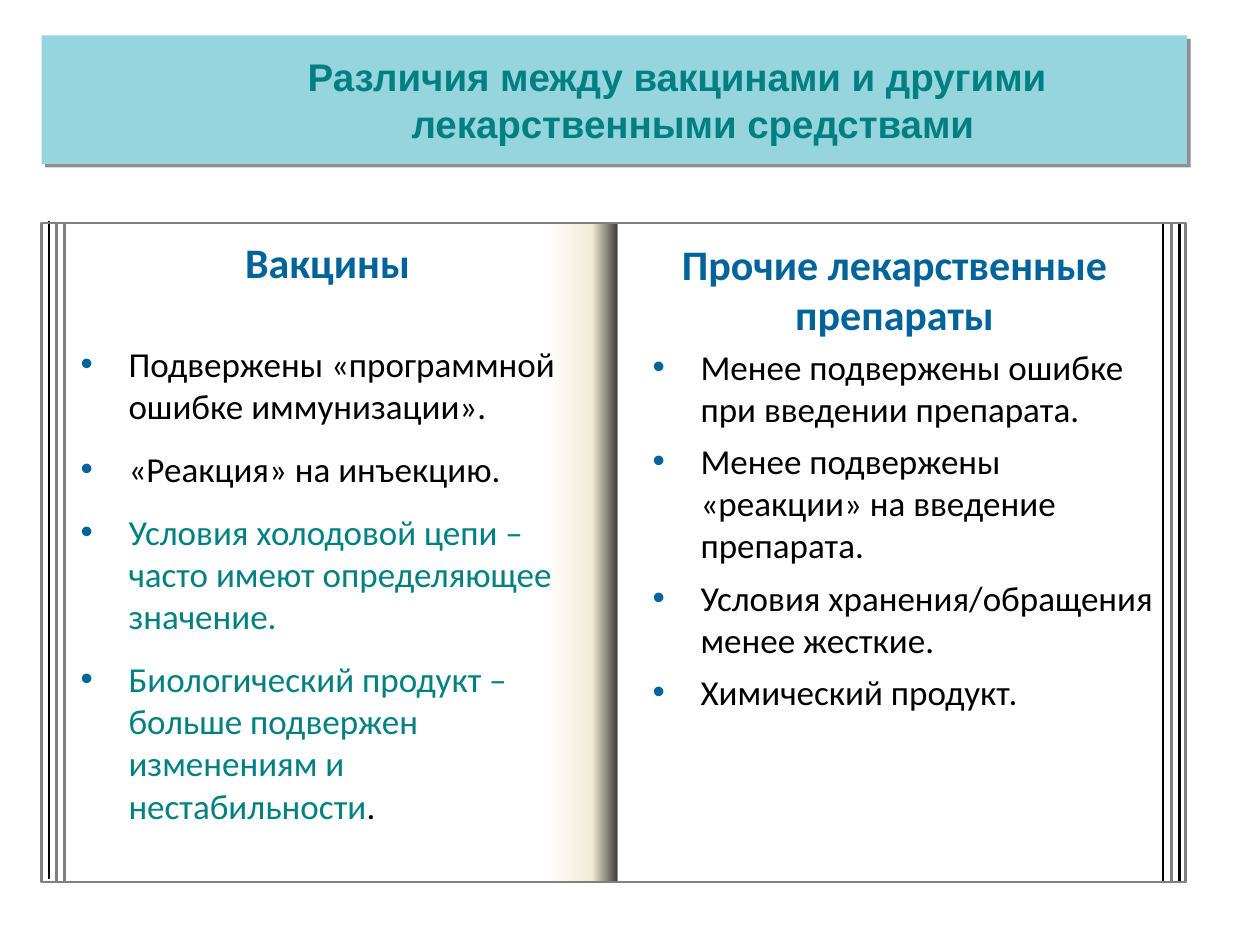
from copy import deepcopy
from dataclasses import dataclass

from lxml import etree
from pptx import Presentation
from pptx.dml.color import RGBColor
from pptx.enum.shapes import MSO_CONNECTOR, MSO_SHAPE
from pptx.enum.text import MSO_ANCHOR, MSO_AUTO_SIZE, PP_ALIGN
from pptx.oxml.ns import qn
from pptx.util import Inches, Pt

LINE, RECT = MSO_CONNECTOR.STRAIGHT, MSO_SHAPE.RECTANGLE
TOP, MIDDLE = MSO_ANCHOR.TOP, MSO_ANCHOR.MIDDLE
LEFT, CENTER = PP_ALIGN.LEFT, PP_ALIGN.CENTER
FIXED = MSO_AUTO_SIZE.NONE
BLACK, GREY, TEAL, BLUE = "000000", "808080", "008080", "00639A"
TALL = 5.23


@dataclass
class Rule:
    x: float
    y: float
    color: str
    width: float = 1.5


@dataclass
class Block:
    slot: int
    box: tuple
    items: list
    font: dict
    para: dict
    indent: tuple = (0, 0)
    anchor: int = TOP
    bullet: bool = False


def rgb(code: str) -> RGBColor:
    return RGBColor.from_string(code)


def apply(target, style: dict) -> None:
    for name, value in style.items():
        setattr(target, name, value)


def draw_rule(slide, rule: Rule) -> None:
    x, y = Inches(rule.x), Inches(rule.y)
    line = slide.shapes.add_connector(LINE, x, y, x, y + Inches(TALL))
    line.line.color.rgb = rgb(rule.color)
    line.line.width = Pt(rule.width)
    etree.SubElement(line._element.spPr, qn("a:effectLst"))


def draw_rect(slide, box: tuple):
    rect = slide.shapes.add_shape(RECT, *map(Inches, box))
    rect.shadow.inherit = False
    return rect


def draw_fold(slide) -> None:
    fold = draw_rect(slide, (4.33, 1.77, 0.57, TALL))
    fold.line.fill.background()
    fold.fill.gradient()
    fold.fill.gradient_angle = 0
    first = fold._element.spPr.find(".//" + qn("a:gs"))
    first.addnext(deepcopy(first))
    shades = [(0, "FFFFFF"), (0.65, "F0EBD5"), (1, "404040")]
    for stop, (place, code) in zip(fold.fill.gradient_stops, shades):
        stop.position = place
        stop.color.rgb = rgb(code)


def draw_frame(slide) -> None:
    frame = draw_rect(slide, (0.33, 1.77, 9.08, TALL))
    frame.fill.background()
    frame.line.color.rgb = rgb(GREY)
    frame.line.width = Pt(1.5)


def add_mark(props) -> None:
    tint = etree.SubElement(props, qn("a:buClr"))
    etree.SubElement(tint, qn("a:srgbClr"), val=BLUE)
    etree.SubElement(props, qn("a:buFont"), typeface="Arial")
    etree.SubElement(props, qn("a:buChar"), char="•")


def fill_block(slide, block: Block):
    holder = next(p for p in slide.placeholders
                  if p.placeholder_format.idx == block.slot)
    sides = dict(zip(("left", "top", "width", "height"), map(Inches, block.box)))
    apply(holder, sides)
    frame = holder.text_frame
    apply(frame, {"word_wrap": True, "auto_size": FIXED,
                  "vertical_anchor": block.anchor})
    for i, runs in enumerate(block.items):
        para = frame.add_paragraph() if i else frame.paragraphs[0]
        apply(para, block.para)
        if i == 0:
            para.space_before = Pt(0)
        props = para._p.get_or_add_pPr()
        margin, hang = block.indent
        props.set("marL", str(Inches(margin)))
        props.set("indent", str(Inches(hang)))
        if block.bullet:
            add_mark(props)
        for text, code in runs:
            run = para.add_run()
            run.text = text
            apply(run.font, block.font)
            run.font.color.rgb = rgb(code)
    slide.shapes._spTree.append(holder._element)
    return holder


def add_shade(shape) -> None:
    effects = etree.SubElement(shape._element.spPr, qn("a:effectLst"))
    shade = etree.SubElement(effects, qn("a:outerShdw"), blurRad="0",
                             dist=str(Pt(3)), dir="2700000", algn="tl")
    tint = etree.SubElement(shade, qn("a:srgbClr"), val=BLACK)
    etree.SubElement(tint, qn("a:alpha"), val="43000")


def main() -> None:
    deck = Presentation()
    deck.slide_width, deck.slide_height = Inches(10), Inches(7.5)
    slide = deck.slides.add_slide(deck.slide_layouts[4])

    draw_rule(slide, Rule(4.88, 1.77, BLACK, 0.75))
    draw_fold(slide)
    for rule in [
        Rule(0.51, 1.76, GREY), Rule(0.39, 1.75, BLACK),
        Rule(9.23, 1.76, BLACK), Rule(9.36, 1.76, BLACK),
        Rule(0.45, 1.76, GREY), Rule(9.3, 1.77, GREY),
    ]:
        draw_rule(slide, rule)
    draw_frame(slide)

    head = {"name": "Calibri", "size": Pt(24), "bold": True}
    body = {"name": "Calibri", "size": Pt(20), "bold": False}
    mid = {"alignment": CENTER, "line_spacing": 1.0, "space_before": Pt(0)}
    tight = {**mid, "alignment": LEFT, "space_after": Pt(6)}
    loose = {**tight, "space_before": Pt(6)}
    hang = (0.38, -0.38)
    left = [
        [("Подвержены «программной ошибке иммунизации».", BLACK)],
        [("«Реакция» на инъекцию.", BLACK)],
        [("Условия холодовой цепи – часто имеют определяющее значение.", TEAL)],
        [("Биологический продукт – больше подвержен изменениям и "
          "нестабильности", TEAL), (".", BLACK)],
    ]
    right = [
        [("Менее подвержены ошибке при введении препарата.", BLACK)],
        [("Менее подвержены «реакции» на введение препарата.", BLACK)],
        [("Условия хранения/обращения менее жесткие.", BLACK)],
        [("Химический продукт.", BLACK)],
    ]
    for block in [
        Block(1, (0.5, 1.83, 4.2, 0.5), [[("Вакцины", BLUE)]], head, mid),
        Block(3, (5, 1.84, 4.2, 1.31),
              [[("Прочие лекарственные препараты", BLUE)]], head, mid),
        Block(2, (0.54, 2.67, 4.25, 3.93), left, body, loose, hang, bullet=True),
        Block(4, (5.08, 2.69, 4.25, 3.47), right, body, tight, hang, bullet=True),
    ]:
        fill_block(slide, block)

    words = "Различия между вакцинами и другими лекарственными средствами"
    title = fill_block(slide, Block(
        0, (0.33, 0.28, 9.09, 1.02), [[(words, TEAL)]],
        {"name": "Arial", "size": Pt(22), "bold": True},
        {**mid, "space_after": Pt(6)}, (1.25, -0.25), MIDDLE))
    title.fill.solid()
    title.fill.fore_color.rgb = rgb("96D5DE")
    add_shade(title)
    deck.save("out.pptx")


if __name__ == "__main__":
    main()
